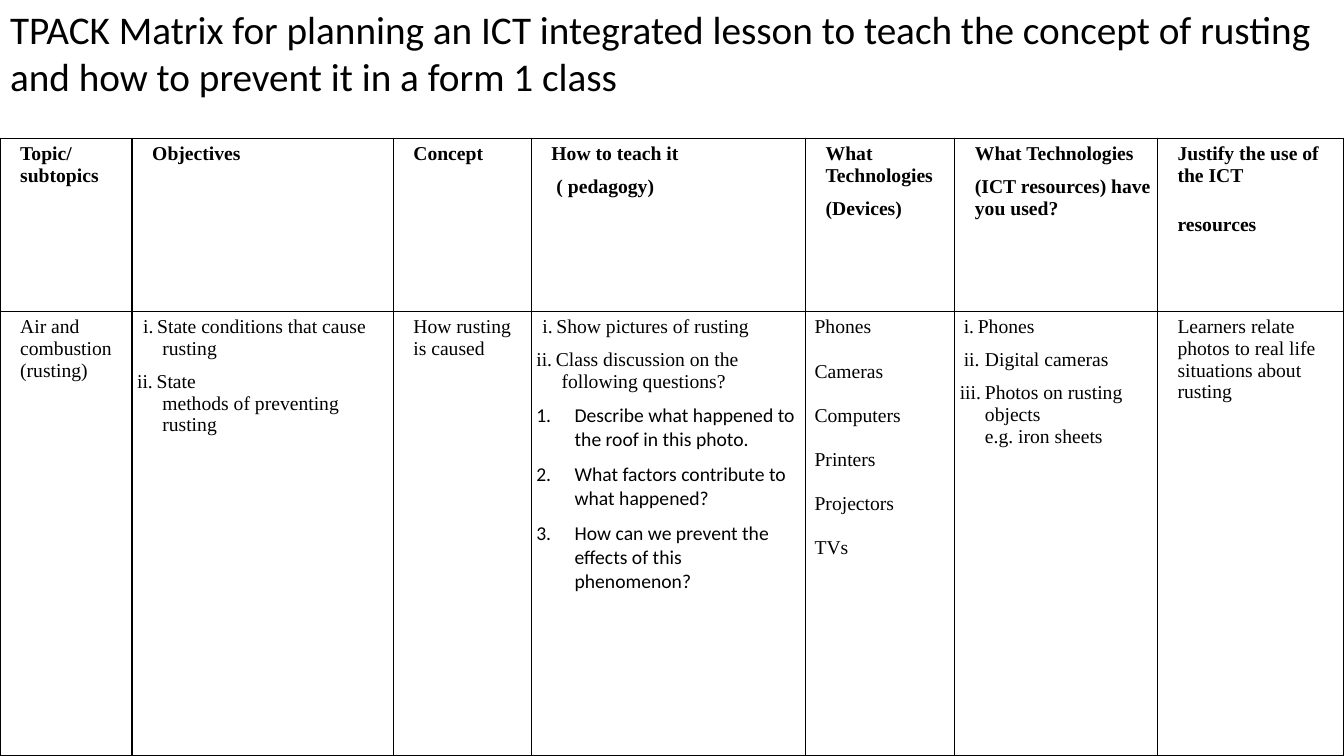
from dataclasses import dataclass

from lxml import etree
from pptx import Presentation
from pptx.dml.color import RGBColor
from pptx.enum.text import MSO_ANCHOR, MSO_AUTO_SIZE, PP_ALIGN
from pptx.oxml.ns import qn
from pptx.util import Inches, Pt

LEFT, TOP, NO_FIT = PP_ALIGN.LEFT, MSO_ANCHOR.TOP, MSO_AUTO_SIZE.NONE
TITLE_ONLY = 5


@dataclass(frozen=True)
class Theme:
    ink: RGBColor = RGBColor(0, 0, 0)
    paper: RGBColor = RGBColor(255, 255, 255)
    sans: str = "Calibri"
    serif: str = "Times New Roman"
    title: float = 28
    body: float = 14
    gap: float = 10.5


@dataclass(frozen=True)
class Para:
    text: str
    marker: str = ""
    sep: str = " "
    left: float = 0.15
    indent: float = 0
    before: float = 8
    after: float = 8
    numbered: bool = False


THEME = Theme()


def head(text, left=0.15, before=0, after=8):
    return Para(text, left=left, before=before, after=after)


def item(marker, text, indent, sep=" "):
    return Para(text, marker, sep, left=0.25, indent=indent, after=0)


def continued(text):
    return Para(text, left=0.25, before=0)


def question(text):
    return Para(text, left=0.38, indent=-0.38, after=0, numbered=True)


def device(text):
    return Para(text, left=0.25, indent=-0.21)


TITLE = ("TPACK Matrix for planning an ICT integrated lesson to teach the "
         "concept of rusting and how to prevent it in a form 1 class")
COL_WIDTHS = [1.31, 2.59, 1.37, 2.72, 1.48, 2.01, 1.85]
ROW_HEIGHTS = [1.72, 4.41]
HEADINGS = [
    [head("Topic/ subtopics")],
    [head("Objectives")],
    [head("Concept")],
    [head("How to teach it"), head("( pedagogy)", left=0.2)],
    [head("What Technologies"), head("(Devices)")],
    [head("What Technologies"), head("(ICT resources) have you used?")],
    [head("Justify the use of the ICT"), head("resources", before=12, after=12)],
]
LESSON = [
    [Para("Air and combustion (rusting)")],
    [item("i.", "State conditions that cause rusting", -0.19),
     item("ii.", "State", -0.25),
     continued("methods of preventing rusting")],
    [Para("How rusting is caused")],
    [item("i.", "Show pictures of rusting", -0.19),
     item("ii.", "Class discussion on the following questions?", -0.25),
     question("Describe what happened to the roof in this photo."),
     question("What factors contribute to what happened?"),
     question("How can we prevent the effects of this phenomenon?")],
    [device(name) for name in ("Phones", "Cameras", "Computers", "Printers",
                               "Projectors", "TVs")],
    [item("i.", "Phones", -0.21),
     item("ii.", "Digital cameras", -0.21, "\t"),
     item("iii.", "Photos on rusting objects", -0.26, "\t"),
     continued("e.g. iron sheets")],
    [Para("Learners relate photos to real life situations about rusting")],
]


def add_run(p, text, size, font, bold=False):
    r = p.add_run()
    r.text = text
    r.font.size, r.font.name, r.font.bold = Pt(size), font, bold
    r.font.color.rgb = THEME.ink


def add_title(slide, left, top, width, height):
    sp = slide.shapes.title
    sp.left, sp.top = Inches(left), Inches(top)
    sp.width, sp.height = Inches(width), Inches(height)
    tf = sp.text_frame
    tf.word_wrap, tf.auto_size, tf.vertical_anchor = True, NO_FIT, TOP
    p = tf.paragraphs[0]
    p.alignment = LEFT
    add_run(p, TITLE, THEME.title, THEME.sans)


def set_borders(cell):
    tc_pr = cell._tc.get_or_add_tcPr()
    for i, side in enumerate(("lnL", "lnR", "lnT", "lnB")):
        ln = etree.Element(qn("a:" + side), w=str(Pt(1)))
        fill = etree.SubElement(ln, qn("a:solidFill"))
        etree.SubElement(fill, qn("a:srgbClr"), val=str(THEME.ink))
        tc_pr.insert(i, ln)


def write_para(p, para, first, bold):
    p.alignment = LEFT
    p.space_before = Pt(0 if first else para.before)
    p.space_after = Pt(para.after)
    p_pr = p._p.get_or_add_pPr()
    p_pr.set("marL", str(Inches(para.left)))
    p_pr.set("indent", str(Inches(para.indent)))
    if para.numbered:
        etree.SubElement(p_pr, qn("a:buFont"), typeface=THEME.sans)
        etree.SubElement(p_pr, qn("a:buAutoNum"), type="arabicPeriod")
    if para.marker:
        add_run(p, para.marker, THEME.body, THEME.serif)
        add_run(p, para.sep, THEME.gap, THEME.serif)
    font = THEME.sans if para.numbered else THEME.serif
    add_run(p, para.text, THEME.body, font, bold)


def fill_cell(cell, paras, bold):
    cell.margin_left = cell.margin_right = Inches(0.05)
    cell.margin_top = cell.margin_bottom = Inches(0.05)
    cell.vertical_anchor = TOP
    cell.fill.solid()
    cell.fill.fore_color.rgb = THEME.paper
    set_borders(cell)
    tf = cell.text_frame
    for i, para in enumerate(paras):
        p = tf.add_paragraph() if i else tf.paragraphs[0]
        write_para(p, para, i == 0, bold)


def add_matrix(slide, left, top, width, height):
    rows = [HEADINGS, LESSON]
    table = slide.shapes.add_table(
        len(rows), len(COL_WIDTHS), Inches(left), Inches(top),
        Inches(width), Inches(height)).table
    table.first_row = table.horz_banding = False
    for column, share in zip(table.columns, COL_WIDTHS):
        column.width = Inches(width * share / sum(COL_WIDTHS))
    for row, share in zip(table.rows, ROW_HEIGHTS):
        row.height = Inches(height * share / sum(ROW_HEIGHTS))
    for r, row in enumerate(rows):
        for c, paras in enumerate(row):
            fill_cell(table.cell(r, c), paras, bold=r == 0)


def main():
    prs = Presentation()
    prs.slide_width, prs.slide_height = Inches(13.33), Inches(7.5)
    slide = prs.slides.add_slide(prs.slide_layouts[TITLE_ONLY])
    add_matrix(slide, 0, 1.37, 13.33, 6.13)
    add_title(slide, 0, 0, 13.33, 1.04)
    prs.save("out.pptx")


if __name__ == "__main__":
    main()
